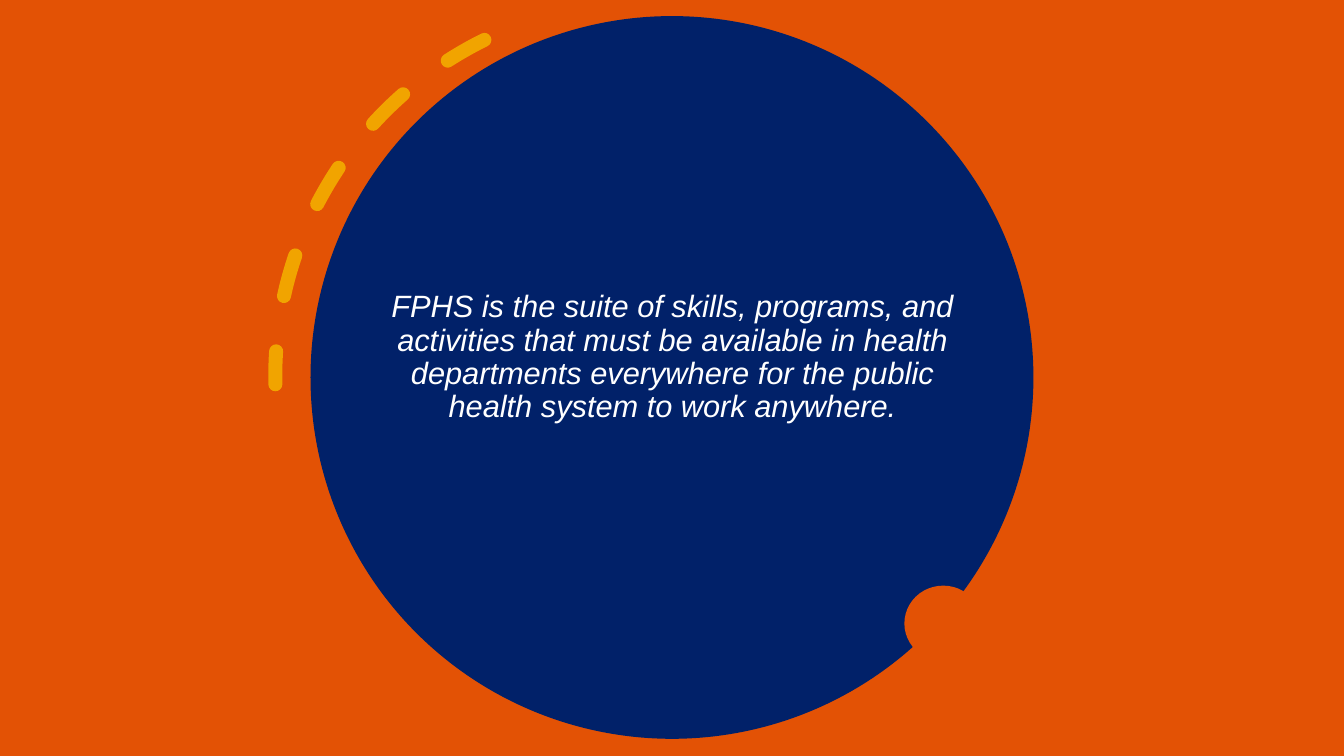
from lxml import etree
from pptx import Presentation
from pptx.dml.color import RGBColor
from pptx.enum.dml import MSO_LINE
from pptx.enum.shapes import MSO_SHAPE
from pptx.enum.text import MSO_ANCHOR, MSO_AUTO_SIZE, PP_ALIGN
from pptx.oxml.ns import qn
from pptx.util import Inches, Pt

RECT, OVAL, ARC = MSO_SHAPE.RECTANGLE, MSO_SHAPE.OVAL, MSO_SHAPE.ARC
DASH = MSO_LINE.DASH
CENTER, MIDDLE = PP_ALIGN.CENTER, MSO_ANCHOR.MIDDLE
NO_FIT = MSO_AUTO_SIZE.NONE

ORANGE, NAVY, GOLD, WHITE = "E35205", "012169", "F2A900", "FFFFFF"
WIDTH, HEIGHT = 13.33, 7.5
QUOTE = (
    "FPHS is the suite of skills, programs, and activities that must be "
    "available in health departments everywhere for the public "
    "health system to work anywhere."
)


def paint(fill, color):
    fill.solid()
    fill.fore_color.rgb = RGBColor.from_string(color)


def add_form(slide, kind, left, top, width, height, color):
    """Add a filled shape without outline or shadow."""
    form = slide.shapes.add_shape(
        kind, Inches(left), Inches(top), Inches(width), Inches(height))
    form.shadow.inherit = False
    paint(form.fill, color)
    form.line.fill.background()
    return form


def add_arc(slide, left, top, size, color):
    """Add a dashed arc with round ends, flipped and turned."""
    arc = add_form(slide, ARC, left, top, size, size, color)
    arc.fill.background()
    arc.adjustments[0] = 162
    arc.adjustments[1] = 200.93
    arc.rotation = 153.7
    arc._element.spPr.find(qn("a:xfrm")).set("flipV", "1")
    paint(arc.line.fill, color)
    arc.line.width = Pt(10)
    arc.line.dash_style = DASH
    line = arc._element.spPr.find(qn("a:ln"))
    line.set("cap", "rnd")
    tint = line.find(".//" + qn("a:srgbClr"))
    etree.SubElement(tint, qn("a:alpha")).set("val", "95000")


def set_quote(slide, left, top, width, height):
    """Fill the subtitle placeholder and bring it to the front."""
    quote = slide.placeholders[1]
    quote.left, quote.top = Inches(left), Inches(top)
    quote.width, quote.height = Inches(width), Inches(height)
    slide.shapes._spTree.append(quote._element)
    frame = quote.text_frame
    frame.text = QUOTE
    frame.word_wrap = True
    frame.auto_size = NO_FIT
    frame.vertical_anchor = MIDDLE
    para = frame.paragraphs[0]
    para.alignment = CENTER
    para.line_spacing = 0.9
    para.space_before = Pt(10)
    para.font.name = "Arial"
    para.font.size = Pt(22)
    para.font.italic = True
    para.font.color.rgb = RGBColor.from_string(WHITE)


def main():
    deck = Presentation()
    deck.slide_width, deck.slide_height = Inches(WIDTH), Inches(HEIGHT)
    slide = deck.slides.add_slide(deck.slide_layouts[0])
    title = slide.shapes.title._element
    title.getparent().remove(title)
    paint(slide.background.fill, NAVY)

    # Backdrop and main circle
    add_form(slide, RECT, 0, 0, WIDTH, HEIGHT, ORANGE)
    add_form(slide, OVAL, 3.08, 0.16, 7.17, 7.17, NAVY)

    # Quote
    set_quote(slide, 3.63, 2.71, 6.08, 1.68)

    # Dashed arc and notch on the rim
    add_arc(slide, 2.73, 0.01, 7.45, GOLD)
    add_form(slide, OVAL, 8.97, 5.81, 0.77, 0.75, ORANGE)

    deck.save("out.pptx")


if __name__ == "__main__":
    main()
